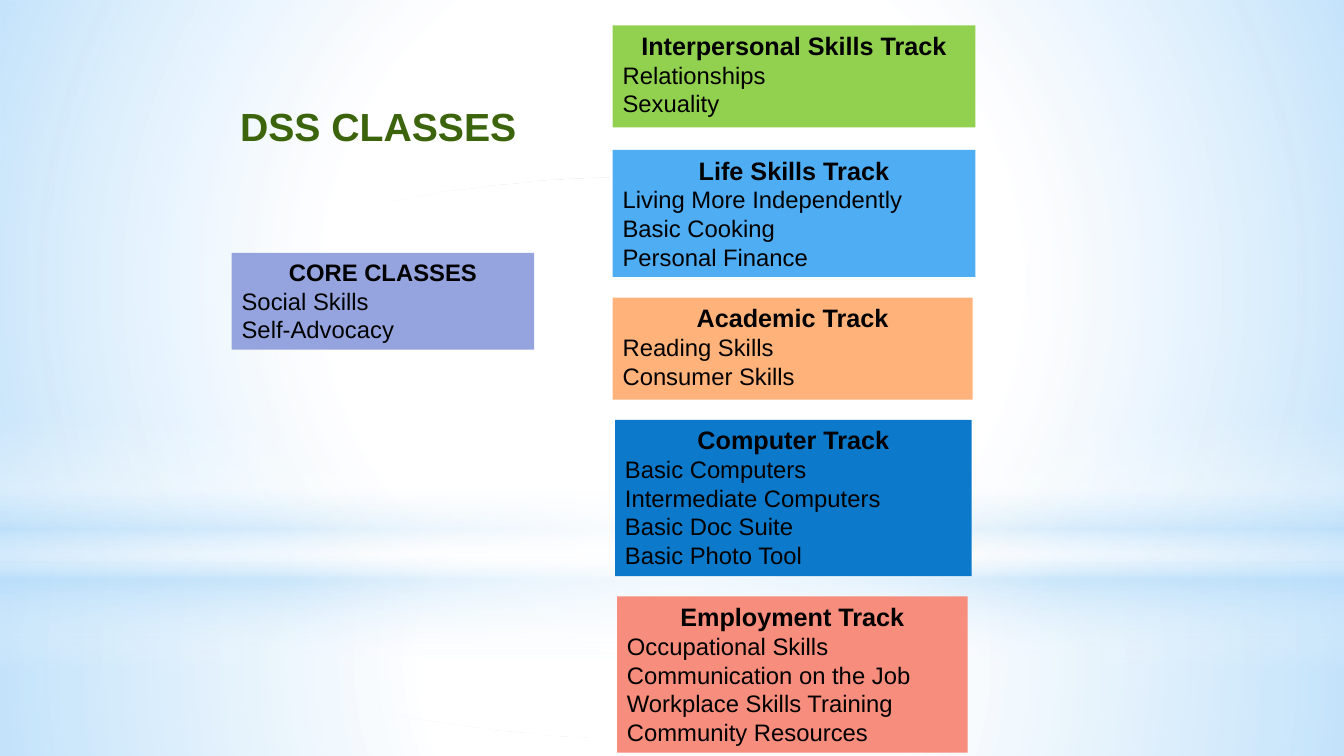
from lxml import etree
from pptx import Presentation
from pptx.dml.color import RGBColor
from pptx.enum.shapes import MSO_SHAPE
from pptx.enum.text import MSO_ANCHOR, MSO_AUTO_SIZE, PP_ALIGN
from pptx.oxml.ns import qn
from pptx.util import Cm, Pt

RECTANGLE, OVAL = MSO_SHAPE.RECTANGLE, MSO_SHAPE.OVAL
CENTER, LEFT = PP_ALIGN.CENTER, PP_ALIGN.LEFT
TOP = MSO_ANCHOR.TOP
FIT_SHAPE = MSO_AUTO_SIZE.SHAPE_TO_FIT_TEXT

BLACK = RGBColor(0x00, 0x00, 0x00)
WHITE = RGBColor(0xFF, 0xFF, 0xFF)
SKY = RGBColor(0xB4, 0xDC, 0xFA)
DARK_GREEN = RGBColor(0x3C, 0x64, 0x0C)
LAVENDER = RGBColor(0x95, 0xA4, 0xDE)
GREEN = RGBColor(0x92, 0xD0, 0x50)
LIGHT_BLUE = RGBColor(0x4F, 0xAD, 0xF3)
ORANGE = RGBColor(0xFF, 0xB3, 0x7A)
BLUE = RGBColor(0x0D, 0x79, 0xCA)
CORAL = RGBColor(0xF7, 0x8D, 0x7C)

FONT = "Arial"
PAGE_WIDTH, PAGE_HEIGHT = 33.87, 19.05
HORIZON = 14.17

# Backdrop: shape, top, height, gradient stops (position, colour, opacity), radial
BACKDROP = [
    (RECTANGLE, HORIZON, PAGE_HEIGHT - HORIZON,
     [(0, WHITE, 91), (37, WHITE, 76), (100, SKY, 79)], True),
    (RECTANGLE, 0, HORIZON,
     [(0, WHITE, 89), (48, WHITE, 62), (100, SKY, 79)], True),
    (RECTANGLE, 10.46, 6.35,
     [(0, WHITE, 0), (29, WHITE, 30), (45, SKY, 40),
      (55, WHITE, 26), (65, SKY, 60), (100, WHITE, 0)], False),
    (OVAL, 4.45, 14.17, [(0, WHITE, 100), (56, WHITE, 0)], True),
]

# Class cards: left, top, width, height, colour, heading size, heading, classes
CARDS = [
    (5.84, 6.37, 7.62, 2.44, LAVENDER, 17, "CORE CLASSES",
     ["Social Skills", "Self-Advocacy"]),
    (15.44, 0.64, 9.14, 2.57, GREEN, 18, "Interpersonal Skills Track",
     ["Relationships", "Sexuality"]),
    (15.44, 3.78, 9.14, 3.2, LIGHT_BLUE, 18, "Life Skills Track",
     ["Living More Independently", "Basic Cooking", "Personal Finance"]),
    (15.44, 7.5, 9.07, 2.57, ORANGE, 18, "Academic Track",
     ["Reading Skills", "Consumer Skills"]),
    (15.5, 10.58, 8.99, 3.94, BLUE, 18, "Computer Track",
     ["Basic Computers", "Intermediate Computers",
      "Basic Doc Suite", "Basic Photo Tool"]),
    (15.55, 15.03, 8.84, 3.94, CORAL, 18, "Employment Track",
     ["Occupational Skills", "Communication on the Job",
      "Workplace Skills Training", "Community Resources"]),
]


def add_plain_shape(page, kind, left, top, width, height):
    shape = page.shapes.add_shape(kind, Cm(left), Cm(top), Cm(width), Cm(height))
    shape.shadow.inherit = False
    shape.line.fill.background()
    return shape


def set_gradient(shape, stops, radial):
    """Fill a shape with a gradient of partly transparent colours."""
    shape.fill.gradient()
    gradient = shape.fill._xPr.find(qn("a:gradFill"))
    for child in list(gradient):
        gradient.remove(child)
    stop_list = etree.SubElement(gradient, qn("a:gsLst"))
    for position, color, opacity in stops:
        stop = etree.SubElement(stop_list, qn("a:gs"), pos=str(position * 1000))
        rgb = etree.SubElement(stop, qn("a:srgbClr"), val=str(color))
        etree.SubElement(rgb, qn("a:alpha"), val=str(opacity * 1000))
    if radial:
        circle = etree.SubElement(gradient, qn("a:path"), path="circle")
        etree.SubElement(circle, qn("a:fillToRect"),
                         {side: "50000" for side in "ltrb"})
    else:
        etree.SubElement(gradient, qn("a:lin"), ang="5400000", scaled="0")


def write_lines(box, lines):
    """Fill a box with (text, alignment, size, bold, colour) lines."""
    frame = box.text_frame
    layout = {"word_wrap": True, "auto_size": FIT_SHAPE, "vertical_anchor": TOP}
    for name, value in layout.items():
        setattr(frame, name, value)
    for index, (text, alignment, size, bold, color) in enumerate(lines):
        para = frame.add_paragraph() if index else frame.paragraphs[0]
        para.alignment = alignment
        span = para.add_run()
        span.text = text
        span.font.color.rgb = color
        for name, value in {"name": FONT, "size": Pt(size), "bold": bold}.items():
            setattr(span.font, name, value)


def add_card(page, left, top, width, height, color, size, heading, classes):
    card = add_plain_shape(page, RECTANGLE, left, top, width, height)
    card.fill.solid()
    card.fill.fore_color.rgb = color
    lines = [(heading, CENTER, size, True, BLACK)]
    lines += [(name, LEFT, 17, False, BLACK) for name in classes]
    write_lines(card, lines)


def add_title(page, text):
    box = page.shapes.add_textbox(Cm(5.72), Cm(2.46), Cm(7.62), Cm(1.45))
    write_lines(box, [(text, CENTER, 28, True, DARK_GREEN)])


def main():
    deck = Presentation()
    deck.slide_width, deck.slide_height = Cm(PAGE_WIDTH), Cm(PAGE_HEIGHT)
    page = deck.slides.add_slide(deck.slide_layouts[6])

    # Sky backdrop
    for kind, top, height, stops, radial in BACKDROP:
        layer = add_plain_shape(page, kind, 0, top, PAGE_WIDTH, height)
        set_gradient(layer, stops, radial)

    # Classes and title
    for card in CARDS:
        add_card(page, *card)
    add_title(page, "DSS CLASSES")

    deck.save("out.pptx")


if __name__ == "__main__":
    main()
